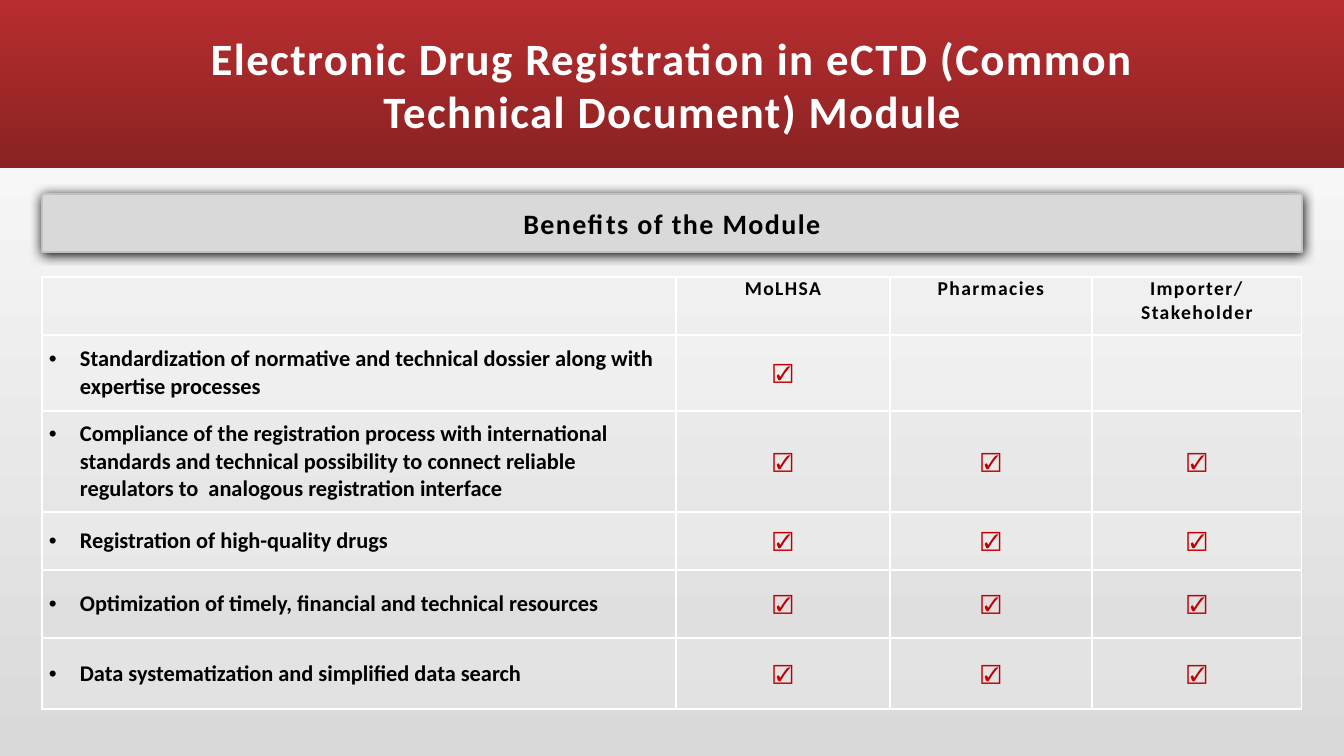
from lxml import etree
from pptx import Presentation, util as u
from pptx.dml import color
from pptx.enum import shapes, text
from pptx.oxml import ns

PX = 914400 / 100.8
WHITE, BLACK, CHECK_RED = "FFFFFF", "000000", "C00000"


def write(frame, words, size, font="Calibri", ink=BLACK, bold=True, spacing=100,
          align=text.PP_ALIGN.CENTER, anchor=text.MSO_ANCHOR.MIDDLE):
    frame.word_wrap = True
    frame.vertical_anchor = anchor
    paragraph = frame.paragraphs[0]
    paragraph.alignment = align
    run = paragraph.add_run()
    run.text = words
    run.font.size = u.Pt(size)
    run.font.name = font
    run.font.bold = bold
    run.font.color.rgb = color.RGBColor.from_string(ink)
    run.font._element.set("spc", str(spacing))
    return paragraph


def add_xml(parent, tag, **attributes):
    return etree.SubElement(parent, ns.qn(tag), attributes)


deck = Presentation()
deck.slide_width, deck.slide_height = round(1344 * PX), round(756 * PX)
slide = deck.slides.add_slide(deck.slide_layouts[5])
title = slide.shapes.title

band = slide.shapes.add_shape(shapes.MSO_SHAPE.RECTANGLE, 0, 0, round(1344 * PX), round(168 * PX))
band.shadow.inherit = False
band.line.fill.background()
title.element.addprevious(band.element)

for fill, angle, stops in (
    (slide.background.fill, 90, ("D9D9D9", WHITE)),
    (band.fill, 270, ("B82D2F", "8A2223")),
):
    fill.gradient()
    fill.gradient_angle = angle
    for stop, shade in zip(fill.gradient_stops, stops):
        stop.color.rgb = color.RGBColor.from_string(shade)

title.left, title.top, title.width, title.height = [round(n * PX) for n in (118, 0, 1109, 168)]
title.text_frame.auto_size = text.MSO_AUTO_SIZE.NONE
write(title.text_frame, "Electronic Drug Registration in eCTD (Common Technical Document) Module",
      32, ink=WHITE)

benefits = slide.shapes.add_shape(shapes.MSO_SHAPE.RECTANGLE,
                                  *[round(n * PX) for n in (42, 194, 1260, 58)])
benefits.fill.solid()
benefits.fill.fore_color.rgb = color.RGBColor.from_string("D9D9D9")
benefits.line.color.rgb = color.RGBColor.from_string("C1C0C3")
benefits.line.width = u.Pt(1)
benefits.shadow.inherit = False
glow = add_xml(benefits.element.spPr.find(ns.qn("a:effectLst")), "a:outerShdw",
               blurRad=str(u.Pt(8.5)), dist=str(u.Pt(1)), dir="5400000",
               algn="ctr", rotWithShape="0")
add_xml(glow, "a:srgbClr", val=BLACK)
write(benefits.text_frame, "Benefits of the Module", 20)

audiences = ["", "MoLHSA", "Pharmacies", "Importer/ Stakeholder"]
benefit_rows = [
    ("Standardization of normative and technical dossier along with expertise processes", 1),
    ("Compliance of the registration process with international standards and technical "
     "possibility to connect reliable regulators to  analogous registration interface", 3),
    ("Registration of high-quality drugs", 3),
    ("Optimization of timely, financial and technical resources", 3),
    ("Data systematization and simplified data search", 3),
]
grid = [audiences] + [[words] + ["☑"] * checks + [""] * (3 - checks)
                      for words, checks in benefit_rows]
column_widths = [634, 214, 202, 210]
row_heights = [58, 76, 101, 58, 68, 71]

matrix = slide.shapes.add_table(len(grid), len(audiences),
                                *[round(n * PX) for n in (42, 277, 1260, 432)]).table
matrix.first_row = matrix.horz_banding = False
for column, width in zip(matrix.columns, column_widths):
    column.width = round(width * PX)
for row, height in zip(matrix.rows, row_heights):
    row.height = round(height * PX)

for r, entries in enumerate(grid):
    for c, words in enumerate(entries):
        cell = matrix.cell(r, c)
        cell.margin_left = cell.margin_right = round(7 * PX)
        cell.margin_top = cell.margin_bottom = 0
        if r % 2:
            cell.fill.solid()
            cell.fill.fore_color.rgb = color.RGBColor.from_string(WHITE)
            tint = cell._tc.tcPr.find(".//" + ns.qn("a:srgbClr"))
            add_xml(tint, "a:alpha", val="20000")
        else:
            cell.fill.background()

        weights = {"L": 1, "R": 1, "T": 2 if r == 1 else 1, "B": 2 if r == 0 else 1}
        for position, (side, weight) in enumerate(weights.items()):
            border = etree.Element(ns.qn("a:ln" + side), w=str(u.Pt(weight)))
            add_xml(add_xml(border, "a:solidFill"), "a:srgbClr", val=WHITE)
            cell._tc.tcPr.insert(position, border)

        if not words:
            continue
        if r == 0:
            write(cell.text_frame, words, 14, anchor=text.MSO_ANCHOR.TOP)
        elif c:
            write(cell.text_frame, words, 14, font="Arial", ink=CHECK_RED)
        else:
            benefit = write(cell.text_frame, words, 16, spacing=0, align=text.PP_ALIGN.LEFT)
            benefit.space_before = u.Pt(12)
            bullet = benefit._p.get_or_add_pPr()
            bullet.set("marL", str(round(31 * PX)))
            bullet.set("indent", str(round(-31 * PX)))
            add_xml(bullet, "a:buFont", typeface="Arial")
            add_xml(bullet, "a:buChar", char="•")
        cell.vertical_anchor = text.MSO_ANCHOR.MIDDLE if r else text.MSO_ANCHOR.TOP

deck.save("out.pptx")
